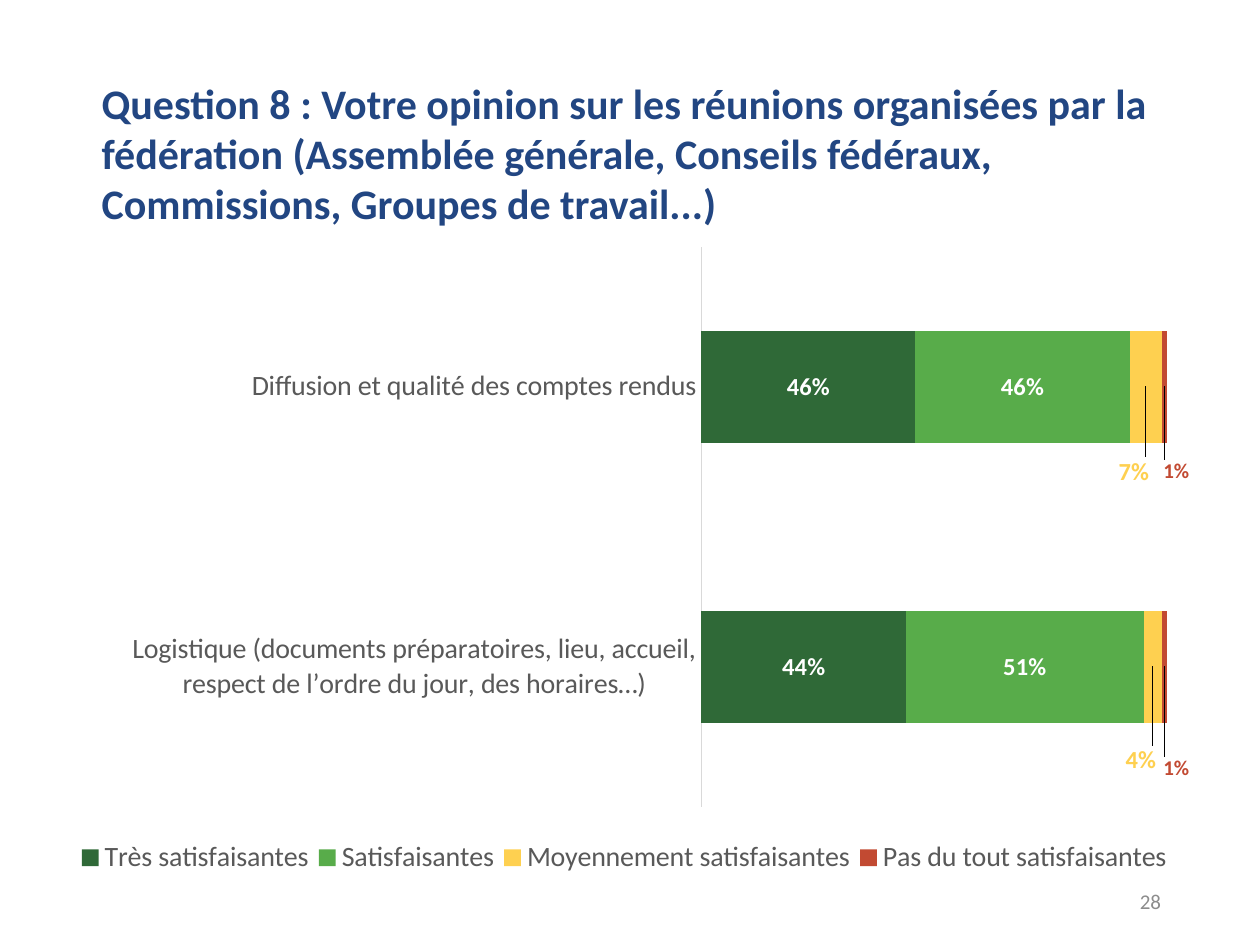
from dataclasses import dataclass

from lxml.etree import SubElement
from pptx import Presentation
from pptx.chart.data import CategoryChartData
from pptx.dml.color import RGBColor
from pptx.enum.chart import XL_CHART_TYPE as ChartType
from pptx.enum.chart import XL_LABEL_POSITION as LabelPosition
from pptx.enum.chart import XL_LEGEND_POSITION as LegendPosition
from pptx.enum.chart import XL_TICK_MARK as TickMark
from pptx.enum.text import MSO_ANCHOR as Anchor
from pptx.enum.text import PP_ALIGN as Align
from pptx.oxml import parse_xml
from pptx.oxml.ns import nsdecls, qn
from pptx.util import Pt


@dataclass(frozen=True)
class Theme:
    font: str = "Calibri"
    title: str = "224682"
    muted: str = "8C8C8C"
    chart_text: str = "595959"
    axis_line: str = "D9D9D9"
    white: str = "FFFFFF"
    very_good: str = "2F6937"
    good: str = "58AC4A"
    average: str = "FED050"
    poor: str = "C24A32"
    title_size: int = 24
    chart_size: int = 16
    label_size: int = 14
    small_size: int = 12


THEME = Theme()

CATEGORIES = [
    "Logistique (documents préparatoires, lieu, accueil, "
    "respect de l’ordre du jour, des horaires…)",
    "Diffusion et qualité des comptes rendus",
]

# Name, values, fill, label colour, label size, label shifts as chart fractions
ANSWERS = [
    ("Très satisfaisantes", (0.44, 0.46), THEME.very_good,
     THEME.white, THEME.label_size, ()),
    ("Satisfaisantes", (0.51, 0.46), THEME.good,
     THEME.white, THEME.label_size, ()),
    ("Moyennement satisfaisantes", (0.04, 0.07), THEME.average,
     THEME.average, THEME.label_size, ((-0.01, 0.11), (-0.01, 0.1))),
    ("Pas du tout satisfaisantes", (0.01, 0.01), THEME.poor,
     THEME.poor, THEME.small_size, ((0.01, 0.12), (0.01, 0.1))),
]


def style_font(font, size, color, bold=False):
    font.name = THEME.font
    font.size = Pt(size)
    font.bold = bold
    font.color.rgb = RGBColor.from_string(color)


def add_text(slide, box, text, size, color, bold=False,
             align=Align.LEFT, anchor=Anchor.TOP):
    frame = slide.shapes.add_textbox(*map(Pt, box)).text_frame
    frame.word_wrap = True
    frame.vertical_anchor = anchor
    paragraph = frame.paragraphs[0]
    paragraph.alignment = align
    run = paragraph.add_run()
    run.text = text
    style_font(run.font, size, color, bold)


def manual_layout(**settings):
    layout = parse_xml(f"<c:layout {nsdecls('c')}/>")
    manual = SubElement(layout, qn("c:manualLayout"))
    for name, value in settings.items():
        SubElement(manual, qn(f"c:{name}")).set("val", str(value))
    return layout


def place(element, layout, predecessor):
    """Put the layout right after predecessor, replacing any existing one."""
    for old in element.findall(qn("c:layout")):
        element.remove(old)
    if predecessor is None:
        element.insert(0, layout)
    else:
        element.find(qn(predecessor)).addnext(layout)


def style_labels(series, color, size, shifts):
    labels = series.data_labels
    labels.show_value = True
    labels.number_format = "0%"
    labels.number_format_is_linked = False
    labels.position = LabelPosition.CENTER
    style_font(labels.font, size, color, bold=True)
    for index, (dx, dy) in enumerate(shifts):
        label = series.points[index].data_label
        style_font(label.font, size, color, bold=True)
        label.position = LabelPosition.CENTER
        element = labels._element.findall(qn("c:dLbl"))[index]
        place(element, manual_layout(x=dx, y=dy), "c:idx")


def style_axes(chart):
    questions = chart.category_axis
    questions.major_tick_mark = TickMark.NONE
    questions.minor_tick_mark = TickMark.NONE
    questions.format.line.width = Pt(0.75)
    questions.format.line.color.rgb = RGBColor.from_string(THEME.axis_line)
    style_font(questions.tick_labels.font, THEME.chart_size, THEME.chart_text)

    shares = chart.value_axis
    shares.visible = False
    shares.has_major_gridlines = False
    shares.minimum_scale = 0
    shares.maximum_scale = 1.2


def add_legend(chart):
    chart.has_legend = True
    legend = chart.legend
    legend.position = LegendPosition.BOTTOM
    legend.include_in_layout = False
    style_font(legend.font, THEME.chart_size, THEME.chart_text)
    layout = manual_layout(xMode="edge", yMode="edge",
                           x=0, y=0.89, w=0.93, h=0.06)
    place(legend._element, layout, "c:legendPos")


def add_opinion_chart(slide, box):
    data = CategoryChartData(number_format="0%")
    data.categories = CATEGORIES
    for name, values, *_ in ANSWERS:
        data.add_series(name, values)
    chart = slide.shapes.add_chart(
        ChartType.BAR_STACKED, *map(Pt, box), data).chart
    chart.has_title = False
    style_font(chart.font, 10, "000000")

    plot = chart.plots[0]
    plot.gap_width = 150
    plot.overlap = 100
    plot.vary_by_categories = False
    for series, answer in zip(plot.series, ANSWERS):
        _, _, fill, label_color, label_size, shifts = answer
        series.format.fill.solid()
        series.format.fill.fore_color.rgb = RGBColor.from_string(fill)
        style_labels(series, label_color, label_size, shifts)

    style_axes(chart)
    add_legend(chart)
    plot_area = chart._chartSpace.find(f".//{qn('c:plotArea')}")
    layout = manual_layout(layoutTarget="inner", xMode="edge", yMode="edge",
                           x=0.53, y=0.2, w=0.47, h=0.66)
    place(plot_area, layout, None)


def main():
    deck = Presentation()
    deck.slide_width, deck.slide_height = Pt(720), Pt(540)
    slide = deck.slides.add_slide(deck.slide_layouts[6])

    add_opinion_chart(slide, (41, 44, 679, 485))
    add_text(slide, (508.5, 500.5, 162, 28.75), "28", THEME.small_size,
             THEME.muted, align=Align.RIGHT, anchor=Anchor.MIDDLE)
    add_text(slide, (51, 40.5, 633, 94.5),
             "Question 8 : Votre opinion sur les réunions organisées par la "
             "fédération (Assemblée générale, Conseils fédéraux, "
             "Commissions, Groupes de travail...)",
             THEME.title_size, THEME.title, bold=True)
    deck.save("out.pptx")


if __name__ == "__main__":
    main()
